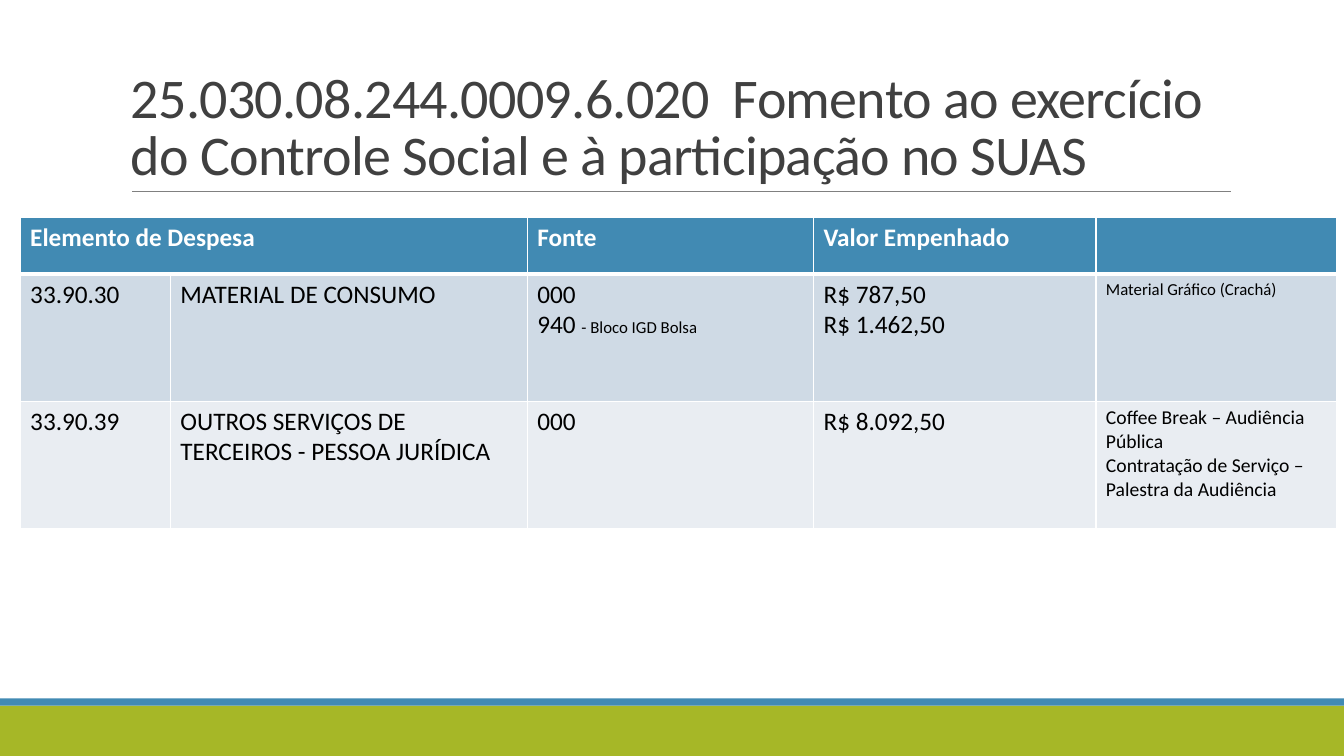
from lxml.etree import SubElement
from pptx import Presentation
from pptx.dml.color import RGBColor
from pptx.enum.shapes import MSO_CONNECTOR, MSO_SHAPE
from pptx.enum.text import MSO_ANCHOR
from pptx.oxml import parse_xml
from pptx.oxml.ns import nsdecls, qn
from pptx.util import Inches, Pt

WIDTH, HEIGHT = 13.33, 7.5
FONT = "Calibri"
BLUE, GREEN, WHITE, BLACK = "418AB3", "A6B727", "FFFFFF", "000000"
TITLE = ("25.030.08.244.0009.6.020  Fomento ao exercício "
         "do Controle Social e à participação no SUAS")

# Bands: top, height, colour
BANDS = [(7, 0.5, GREEN), (6.93, 0.07, BLUE)]

# A cell is a list of paragraphs, a paragraph a list of (text, size) runs
HEADER = [[[(text, 18)]] for text in
          ("Elemento de Despesa", "", "Fonte", "Valor Empenhado", "")]
EXPENSES = [
    [[[("33.90.30", 18)]],
     [[("MATERIAL DE CONSUMO", 18)]],
     [[("000", 18)], [("940 ", 18), ("- Bloco IGD Bolsa", 12)]],
     [[("R$ 787,50", 18)], [("R$ 1.462,50", 18)]],
     [[("Material Gráfico (Crachá)", 12)]]],
    [[[("33.90.39", 18)]],
     [[("OUTROS SERVIÇOS DE TERCEIROS - PESSOA JURÍDICA", 18)]],
     [[("000", 18)]],
     [[("R$ 8.092,50", 18)]],
     [[("Coffee Break – Audiência Pública", 14)],
      [("Contratação de Serviço – Palestra da Audiência", 14)]]],
]
COL_WIDTHS = [1.49, 3.54, 2.84, 2.8, 2.39]
ROW_HEIGHTS = [0.56, 1.26, 1.26]
ROW_FILLS = [BLUE, "CFDAE5", "E9EDF2"]


def rgb(color):
    return RGBColor.from_string(color)


def style_run(r, size, color, bold=False):
    r.font.name, r.font.size, r.font.bold = FONT, Pt(size), bold
    r.font.color.rgb = rgb(color)


def add_band(slide, top, height, color):
    sp = slide.shapes.add_shape(MSO_SHAPE.RECTANGLE, 0, Inches(top),
                                Inches(WIDTH), Inches(height))
    sp.shadow.inherit = False
    sp.fill.solid()
    sp.fill.fore_color.rgb = rgb(color)
    sp.line.fill.background()


def add_title(slide):
    line = slide.shapes.add_connector(MSO_CONNECTOR.STRAIGHT, Inches(1.31),
                                      Inches(1.9), Inches(12.21), Inches(1.9))
    line.line.color.rgb = rgb("808080")
    line.line.width = Pt(0.5)
    SubElement(line._element.spPr, qn("a:effectLst"))

    sp = slide.shapes.add_textbox(Inches(1.2), Inches(0.31),
                                  Inches(11), Inches(1.59))
    tf = sp.text_frame
    tf.word_wrap = True
    tf.vertical_anchor = MSO_ANCHOR.BOTTOM
    tf.text = TITLE
    p = tf.paragraphs[0]
    p.line_spacing = 0.85
    r = p.runs[0]
    style_run(r, 40, "404040")
    r.font._element.set("spc", "-50")


def set_borders(cell, bottom):
    """Draw white borders, 1 pt except for the given bottom width."""
    tc_pr = cell._tc.get_or_add_tcPr()
    widths = {"lnL": 1, "lnR": 1, "lnT": 1, "lnB": bottom}
    for i, (tag, width) in enumerate(widths.items()):
        tc_pr.insert(i, parse_xml(
            f'<a:{tag} {nsdecls("a")} w="{Pt(width)}"><a:solidFill>'
            f'<a:srgbClr val="{WHITE}"/></a:solidFill></a:{tag}>'))


def fill_cell(cell, paragraphs, fill, header):
    cell.fill.solid()
    cell.fill.fore_color.rgb = rgb(fill)
    set_borders(cell, 3 if header else 1)
    tf = cell.text_frame
    for i, runs in enumerate(paragraphs):
        p = tf.add_paragraph() if i else tf.paragraphs[0]
        for text, size in runs:
            if text:
                r = p.add_run()
                r.text = text
                style_run(r, size, WHITE if header else BLACK, header)


def add_expense_table(slide):
    rows = [HEADER] + EXPENSES
    table = slide.shapes.add_table(
        len(rows), len(COL_WIDTHS), Inches(0.2), Inches(2.16),
        Inches(sum(COL_WIDTHS)), Inches(sum(ROW_HEIGHTS))).table
    table.horz_banding = False
    for col, width in zip(table.columns, COL_WIDTHS):
        col.width = Inches(width)
    for i, (row, height) in enumerate(zip(table.rows, ROW_HEIGHTS)):
        row.height = Inches(height)
        for cell, paragraphs in zip(row.cells, rows[i]):
            fill_cell(cell, paragraphs, ROW_FILLS[i], i == 0)
    table.cell(0, 0).merge(table.cell(0, 1))


def main():
    prs = Presentation()
    prs.slide_width, prs.slide_height = Inches(WIDTH), Inches(HEIGHT)
    slide = prs.slides.add_slide(prs.slide_layouts[6])
    for band in BANDS:
        add_band(slide, *band)
    add_title(slide)
    add_expense_table(slide)
    prs.save("out.pptx")


if __name__ == "__main__":
    main()
